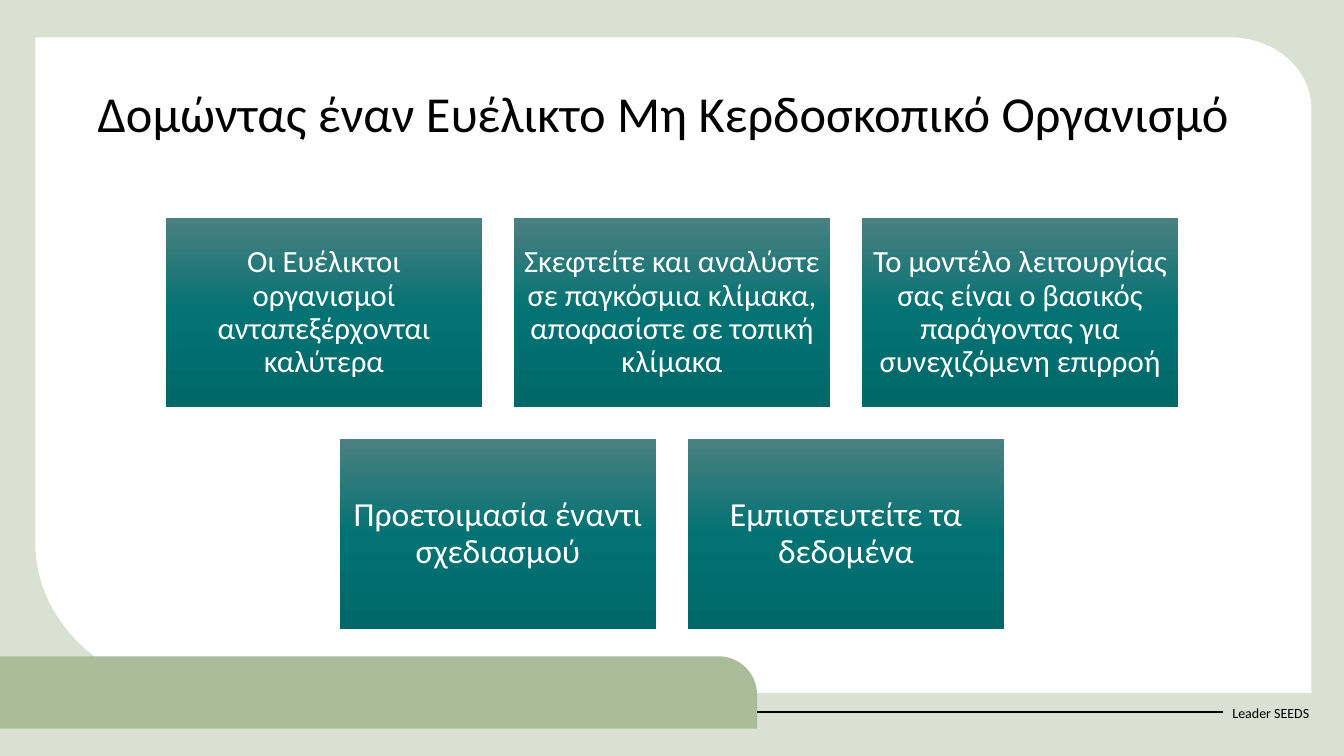
"""Build the slide on structuring an agile non-profit organisation."""
import copy
import math

import lxml.etree
import pptx
import pptx.dml.color
import pptx.enum.shapes
import pptx.enum.text
import pptx.oxml.ns
import pptx.util

Cm = pptx.util.Cm
MIDDLE = pptx.enum.text.MSO_ANCHOR.MIDDLE
CENTER = pptx.enum.text.PP_ALIGN.CENTER
LEFT = pptx.enum.text.PP_ALIGN.LEFT

TITLE = "Δομώντας έναν Ευέλικτο Μη Κερδοσκοπικό Οργανισμό"
FOOTER = "Leader SEEDS"
CARD_ROWS = [
    {"size": 22, "inset": 0.23, "cards": [
        "Οι Ευέλικτοι οργανισμοί ανταπεξέρχονται καλύτερα",
        "Σκεφτείτε και αναλύστε σε παγκόσμια κλίμακα, αποφασίστε σε τοπική κλίμακα",
        "Το μοντέλο λειτουργίας σας είναι ο βασικός παράγοντας για συνεχιζόμενη επιρροή",
    ]},
    {"size": 24, "inset": 0.25, "cards": [
        "Προετοιμασία έναντι σχεδιασμού",
        "Εμπιστευτείτε τα δεδομένα",
    ]},
]
CARD_GRADIENT = [(0, "4B8081"), (0.5, "037273"), (1, "006869")]

PAGE_WIDTH, PAGE_HEIGHT = 33.87, 19.05
CARD_WIDTH, CARD_HEIGHT, CARD_GAP = 7.97, 4.78, 0.8
CARDS_TOP = 5.49


def color(value):
    return pptx.dml.color.RGBColor.from_string(value)


def quarter(center_x, center_y, radius_x, radius_y, start, steps=30):
    angles = [math.radians(start + 90 * step / steps) for step in range(steps + 1)]
    return [(center_x + radius_x * math.cos(angle), center_y + radius_y * math.sin(angle))
            for angle in angles]


def paint(shape, fill):
    shape.shadow.inherit = False
    shape.fill.solid()
    shape.fill.fore_color.rgb = color(fill)
    shape.line.fill.background()


def add_outline(page, points, fill):
    corners = [(Cm(x), Cm(y)) for x, y in points]
    builder = page.shapes.build_freeform(*corners[0])
    builder.add_line_segments(corners[1:], close=True)
    paint(builder.convert_to_shape(), fill)


def write(shape, text, size, font_color, align=LEFT, spacing=1.0):
    frame = shape.text_frame
    frame.word_wrap = True
    frame.text = text
    para = frame.paragraphs[0]
    para.alignment = align
    para.line_spacing = spacing
    font = para.runs[0].font
    font.name = "Calibri"
    font.size = pptx.util.Pt(size)
    font.color.rgb = color(font_color)
    return frame


def add_label(page, place, *style, **options):
    box = page.shapes.add_textbox(*map(Cm, place))
    return write(box, *style, **options)


def add_card(page, left, top, text, size, inset):
    card = page.shapes.add_shape(pptx.enum.shapes.MSO_SHAPE.RECTANGLE,
                                 Cm(left), Cm(top), Cm(CARD_WIDTH), Cm(CARD_HEIGHT))
    paint(card, CARD_GRADIENT[0][1])
    card.fill.gradient()
    card.fill.gradient_angle = 270
    stop_list = card.element.spPr.find(".//" + pptx.oxml.ns.qn("a:gsLst"))
    stop_list.append(copy.deepcopy(stop_list[0]))
    for stop, (position, shade) in zip(card.fill.gradient_stops, CARD_GRADIENT):
        stop.position = position
        stop.color.rgb = color(shade)
    frame = write(card, text, size, "FFFFFF", CENTER, 0.9)
    frame.vertical_anchor = MIDDLE
    frame.margin_left = frame.margin_right = Cm(inset)
    frame.margin_top = frame.margin_bottom = Cm(inset)


def add_backdrop(page):
    ground = page.shapes.add_shape(pptx.enum.shapes.MSO_SHAPE.RECTANGLE,
                                   0, 0, Cm(PAGE_WIDTH), Cm(PAGE_HEIGHT))
    paint(ground, "DAE0D2")
    left, top, right, bottom = 0.89, 0.94, 33.05, 17.46
    panel = [(left, top)]
    panel += quarter(right - 2.06, top + 1.8, 2.06, 1.8, 270)
    panel += [(right, bottom)]
    panel += quarter(left + 4.32, bottom - 3.78, 4.32, 3.78, 90)
    add_outline(page, panel, "FFFFFF")

    footer = add_label(page, (30.81, 17.45, 2.57, 1.02), FOOTER, 10, "000000")
    footer.vertical_anchor = MIDDLE
    rule = page.shapes.add_connector(pptx.enum.shapes.MSO_CONNECTOR.STRAIGHT,
                                     0, Cm(17.95), Cm(30.81), Cm(17.95))
    rule.line.color.rgb = color("000000")
    rule.line.width = pptx.util.Pt(1.5)
    lxml.etree.SubElement(rule.element.spPr, pptx.oxml.ns.qn("a:effectLst"))

    bar_top, bar_right, bar_bottom, radius = 16.54, 19.08, 18.36, 0.97
    bar = [(0, bar_bottom), (0, bar_top)]
    bar += quarter(bar_right - radius, bar_top + radius, radius, radius, 270)
    bar += [(bar_right, bar_bottom)]
    add_outline(page, bar, "AABC99")


def main():
    deck = pptx.Presentation()
    deck.slide_width, deck.slide_height = Cm(PAGE_WIDTH), Cm(PAGE_HEIGHT)
    page = deck.slides.add_slide(deck.slide_layouts[6])
    add_backdrop(page)
    add_label(page, (2.21, 2.11, 29.44, 2.24), TITLE, 36, "000000", spacing=0.9)
    for row_index, row in enumerate(CARD_ROWS):
        count = len(row["cards"])
        row_width = count * CARD_WIDTH + (count - 1) * CARD_GAP
        row_left = (PAGE_WIDTH - row_width) / 2
        top = CARDS_TOP + row_index * (CARD_HEIGHT + CARD_GAP)
        for column, text in enumerate(row["cards"]):
            left = row_left + column * (CARD_WIDTH + CARD_GAP)
            add_card(page, left, top, text, row["size"], row["inset"])
    deck.save("out.pptx")


if __name__ == "__main__":
    main()
